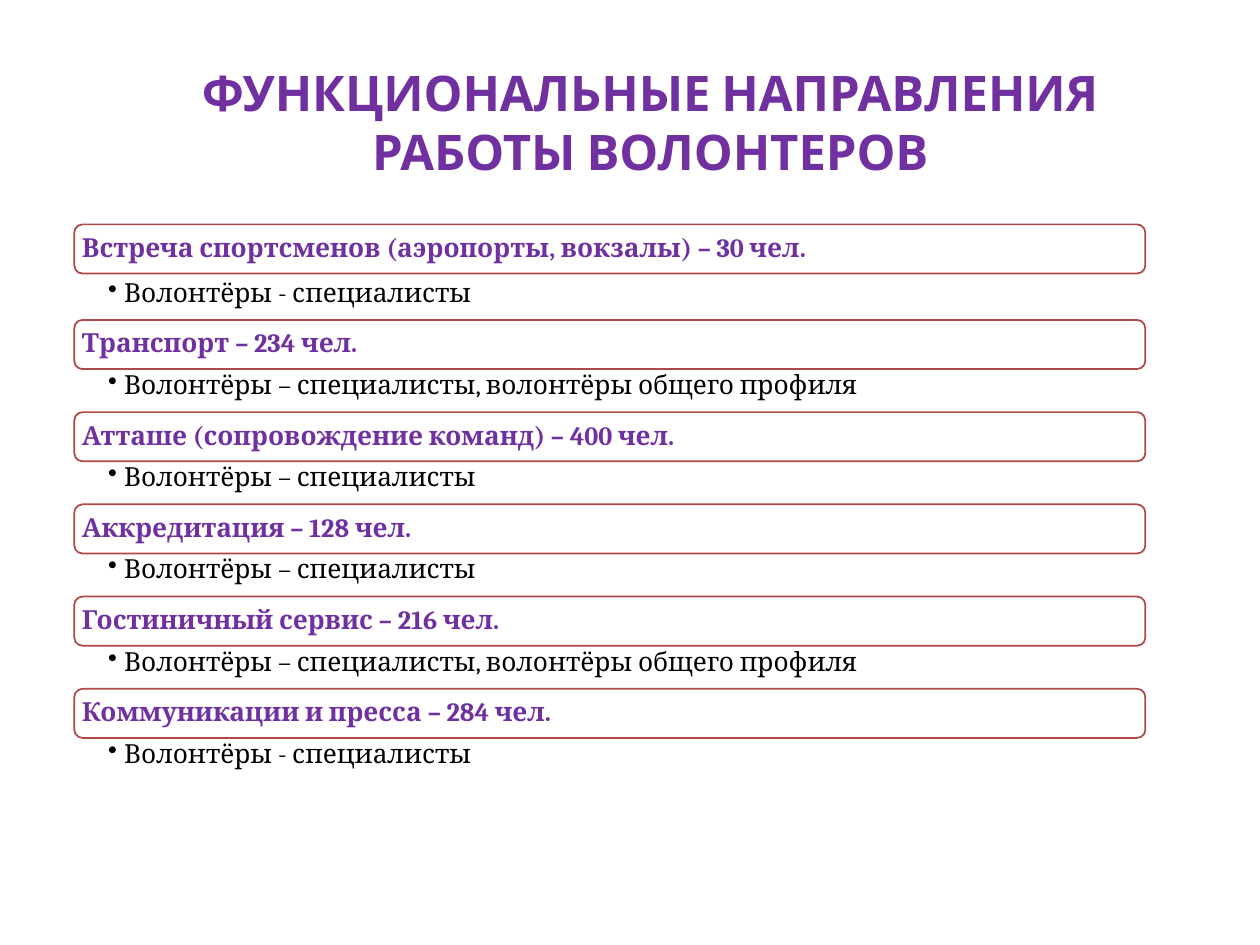
"""Build the slide on the volunteers' areas of work."""
import dataclasses

import lxml.etree
import pptx
import pptx.dml.color
import pptx.enum.shapes
import pptx.enum.text
import pptx.oxml.ns
import pptx.util

Pt = pptx.util.Pt
Color = pptx.dml.color.RGBColor.from_string
Anchor = pptx.enum.text.MSO_ANCHOR


@dataclasses.dataclass(frozen=True)
class Theme:
    head: str = "Cabin"
    body: str = "Cambria"
    purple: str = "7030A0"
    black: str = "000000"
    white: str = "FFFFFF"
    red: str = "AE4946"
    big: int = 28
    small: int = 15


THEME = Theme()
LEFT, TOP, WIDTH = 42.5, 128.2, 612
BAR, NOTE, GAP = 28.1, 24.6, 1.9
EXPERT = "Волонтёры – специалисты"
HYPHEN = "Волонтёры - специалисты"
MIXED = "Волонтёры – специалисты, волонтёры общего профиля"
AREAS = [
    ("Встреча спортсменов (аэропорты, вокзалы) – 30 чел.", HYPHEN),
    ("Транспорт – 234 чел.", MIXED),
    ("Атташе (сопровождение команд) – 400 чел.", EXPERT),
    ("Аккредитация – 128 чел.", EXPERT),
    ("Гостиничный сервис – 216 чел.", MIXED),
    ("Коммуникации и пресса – 284 чел.", HYPHEN),
]


def set_frame(frame, anchor, left, top, right, bottom):
    frame.word_wrap = True
    frame.auto_size = pptx.enum.text.MSO_AUTO_SIZE.NONE
    frame.vertical_anchor = anchor
    frame.margin_left, frame.margin_top = Pt(left), Pt(top)
    frame.margin_right, frame.margin_bottom = Pt(right), Pt(bottom)


def add_run(para, text, name, size, color, bold=False):
    run = para.add_run()
    run.text = text
    font = run.font
    font.name, font.size, font.bold = name, Pt(size), bold
    font.color.rgb = Color(color)


def add_title(slide, text):
    title = slide.shapes.title
    title.left, title.top = Pt(99.4), Pt(32)
    title.width, title.height = Pt(544.3), Pt(75.3)
    set_frame(title.text_frame, Anchor.TOP, 7.2, 3.6, 7.2, 3.6)
    para = title.text_frame.paragraphs[0]
    para.alignment = pptx.enum.text.PP_ALIGN.CENTER
    para.line_spacing = 1.0
    add_run(para, text, THEME.head, THEME.big, THEME.purple, True)


def add_bar(slide, top, text):
    kind = pptx.enum.shapes.MSO_SHAPE.ROUNDED_RECTANGLE
    bar = slide.shapes.add_shape(kind, Pt(LEFT), Pt(top), Pt(WIDTH), Pt(BAR))
    bar.shadow.inherit = False
    bar.fill.solid()
    bar.fill.fore_color.rgb = Color(THEME.white)
    bar.line.color.rgb = Color(THEME.red)
    bar.line.width = Pt(1)
    set_frame(bar.text_frame, Anchor.MIDDLE, 3, 3, 3, 3)
    para = bar.text_frame.paragraphs[0]
    para.alignment = pptx.enum.text.PP_ALIGN.LEFT
    para.line_spacing = 0.9
    add_run(para, text, THEME.body, THEME.small, THEME.purple, True)


def add_note(slide, top, text):
    box = slide.shapes.add_textbox(Pt(LEFT), Pt(top), Pt(WIDTH), Pt(NOTE))
    set_frame(box.text_frame, Anchor.TOP, 19.4, 1.5, 8.6, 1.5)
    para = box.text_frame.paragraphs[0]
    para.level = 1
    para.line_spacing = 0.9
    props = para._p.get_or_add_pPr()
    props.set("marL", str(Pt(9)))
    props.set("indent", str(-Pt(9)))
    mark = lxml.etree.SubElement(props, pptx.oxml.ns.qn("a:buChar"))
    mark.set("char", "•")
    add_run(para, text, THEME.body, THEME.small, THEME.black)


def main():
    deck = pptx.Presentation()
    deck.slide_width, deck.slide_height = Pt(720), Pt(540)
    slide = deck.slides.add_slide(deck.slide_layouts[5])
    add_title(slide, "ФУНКЦИОНАЛЬНЫЕ НАПРАВЛЕНИЯ РАБОТЫ ВОЛОНТЕРОВ")
    top = TOP
    for index, (name, note) in enumerate(AREAS):
        add_bar(slide, top, name)
        top += BAR + (GAP if index == 0 else 0)
        add_note(slide, top, note)
        top += NOTE
    deck.save("out.pptx")


if __name__ == "__main__":
    main()
